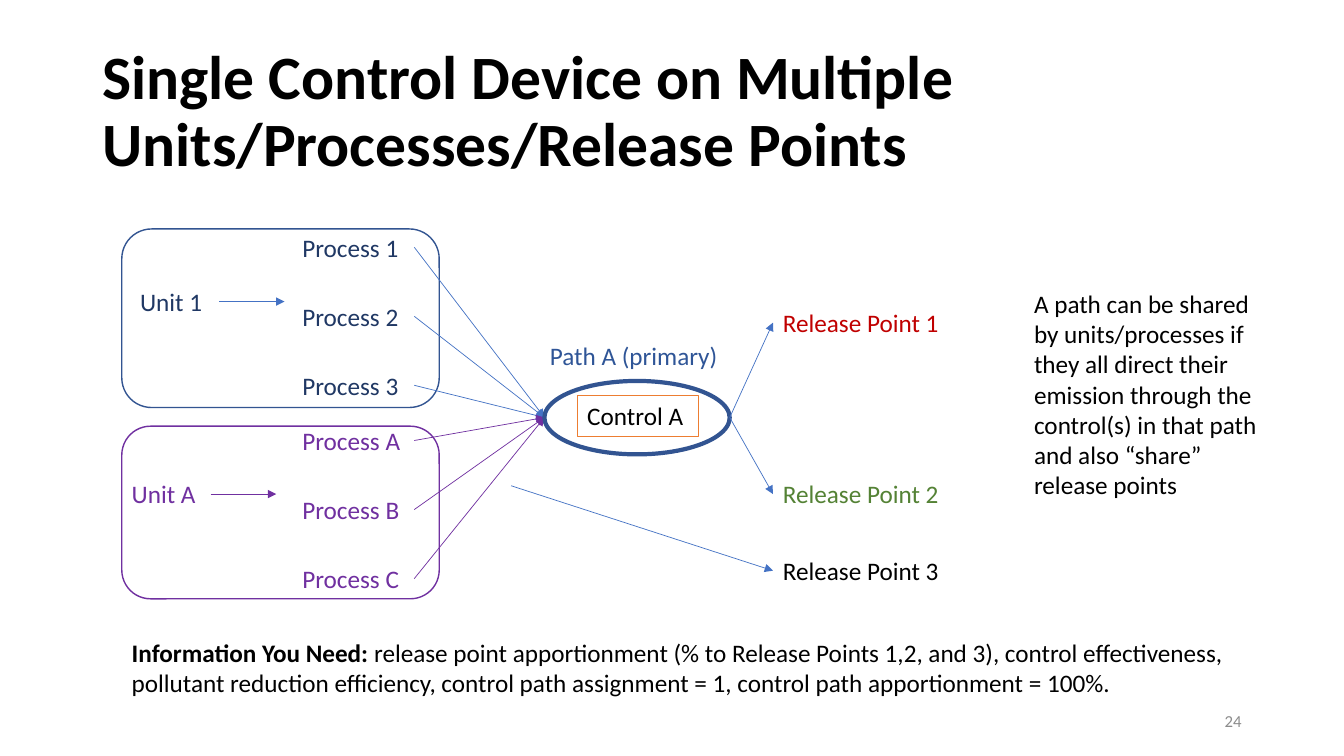
from dataclasses import dataclass

from lxml.etree import SubElement
from pptx import Presentation
from pptx.dml.color import RGBColor
from pptx.enum.shapes import MSO_CONNECTOR as Connector, MSO_SHAPE as Preset
from pptx.enum.text import MSO_ANCHOR as Anchor, MSO_AUTO_SIZE as AutoSize, PP_ALIGN as Align
from pptx.oxml.ns import qn
from pptx.shapes.autoshape import Shape
from pptx.slide import Slide
from pptx.text.text import TextFrame
from pptx.util import Cm, Pt

BLACK = RGBColor(0x00, 0x00, 0x00)
GRAY = RGBColor(0x8C, 0x8C, 0x8C)
NAVY = RGBColor(0x20, 0x38, 0x64)
OUTLINE_BLUE = RGBColor(0x32, 0x54, 0x91)
PATH_BLUE = RGBColor(0x2F, 0x55, 0x97)
ARROW_BLUE = RGBColor(0x44, 0x72, 0xC4)
PURPLE = RGBColor(0x70, 0x30, 0xA0)
ORANGE = RGBColor(0xED, 0x7D, 0x31)
RED = RGBColor(0xC0, 0x00, 0x00)
GREEN = RGBColor(0x54, 0x82, 0x35)

LABEL_HEIGHT = 1.03
LABEL_MIDDLE = 0.51
FRAME_LEFT = 3.07
FRAME_WIDTH = 8.0
PROCESS_LEFT = 7.37
PROCESS_WIDTH = 3.07
PROCESS_PITCH = 1.74
RELEASE_LEFT = 19.48
CONTROL_IN = (13.72, 10.52)
CONTROL_OUT = (18.39, 10.52)
BYPASS_START = (12.88, 12.24)

Point = tuple[float, float]


@dataclass(frozen=True)
class Box:
    left: float
    top: float
    width: float
    height: float = LABEL_HEIGHT

    def lengths(self) -> tuple[Cm, Cm, Cm, Cm]:
        return Cm(self.left), Cm(self.top), Cm(self.width), Cm(self.height)


@dataclass(frozen=True)
class Unit:
    name: str
    label_left: float
    label_top: float
    frame_top: float
    frame_height: float
    processes: tuple[str, ...]
    process_top: float
    text_color: RGBColor
    frame_color: RGBColor
    arrow_color: RGBColor


@dataclass(frozen=True)
class ReleasePoint:
    name: str
    top: float
    color: RGBColor
    source: Point


UNITS = (
    Unit("Unit 1", 3.28, 7.09, 5.77, 4.5, ("Process 1", "Process 2", "Process 3"),
         5.72, NAVY, OUTLINE_BLUE, ARROW_BLUE),
    Unit("Unit A", 3.07, 11.94, 10.74, 4.35, ("Process A", "Process B", "Process C"),
         10.59, PURPLE, PURPLE, PURPLE),
)
RELEASE_POINTS = (
    ReleasePoint("Release Point 1", 7.62, RED, CONTROL_OUT),
    ReleasePoint("Release Point 2", 11.94, GREEN, CONTROL_OUT),
    ReleasePoint("Release Point 3", 13.87, BLACK, BYPASS_START),
)


def apply_format(target: object, values: dict[str, object]) -> None:
    for name, value in values.items():
        setattr(target, name, value)


def write_text(frame: TextFrame, text: str, color: RGBColor, size: float = 18,
               lead: str = "", bold: bool = False, align: Align = Align.LEFT,
               anchor: Anchor = Anchor.TOP, line_spacing: float = 1.0) -> None:
    apply_format(frame, {"word_wrap": True, "auto_size": AutoSize.NONE,
                         "vertical_anchor": anchor})
    paragraph = frame.paragraphs[0]
    apply_format(paragraph, {"alignment": align, "line_spacing": line_spacing})
    for content, is_bold in ((lead, True), (text, bold)):
        if content:
            run = paragraph.add_run()
            run.text = content
            apply_format(run.font, {"name": "Calibri", "size": Pt(size), "bold": is_bold})
            run.font.color.rgb = color


def add_label(slide: Slide, box: Box, text: str, color: RGBColor, **options) -> None:
    write_text(slide.shapes.add_textbox(*box.lengths()).text_frame, text, color, **options)


def add_outline(slide: Slide, preset: Preset, box: Box, color: RGBColor,
                width: float) -> Shape:
    shape = slide.shapes.add_shape(preset, *box.lengths())
    shape.shadow.inherit = False
    shape.fill.background()
    shape.line.color.rgb = color
    shape.line.width = Pt(width)
    return shape


def add_arrow(slide: Slide, start: Point, end: Point, color: RGBColor) -> None:
    arrow = slide.shapes.add_connector(
        Connector.STRAIGHT, *(Cm(value) for value in (*start, *end)))
    arrow.line.color.rgb = color
    arrow.line.width = Pt(0.5)
    SubElement(arrow.line._get_or_add_ln(), qn("a:tailEnd"), type="triangle")
    SubElement(arrow._element.spPr, qn("a:effectLst"))


def add_unit(slide: Slide, unit: Unit) -> None:
    frame = Box(FRAME_LEFT, unit.frame_top, FRAME_WIDTH, unit.frame_height)
    add_outline(slide, Preset.ROUNDED_RECTANGLE, frame, unit.frame_color, 1)
    add_label(slide, Box(unit.label_left, unit.label_top, 2.26), unit.name, unit.text_color)
    arrow_left = unit.label_left + 2.24
    arrow_top = unit.label_top + LABEL_MIDDLE
    add_arrow(slide, (arrow_left, arrow_top), (arrow_left + 1.65, arrow_top),
              unit.arrow_color)
    for index, process in enumerate(unit.processes):
        top = unit.process_top + index * PROCESS_PITCH
        add_label(slide, Box(PROCESS_LEFT, top, PROCESS_WIDTH), process, unit.text_color)
        add_arrow(slide, (PROCESS_LEFT + PROCESS_WIDTH, top + LABEL_MIDDLE), CONTROL_IN,
                  unit.arrow_color)


def add_control(slide: Slide) -> None:
    control = add_outline(slide, Preset.RECTANGLE, Box(14.55, 9.96, 3.05), ORANGE, 0.75)
    write_text(control.text_frame, "Control A", BLACK)
    add_outline(slide, Preset.OVAL, Box(13.72, 9.6, 4.67, 1.85), OUTLINE_BLUE, 3)
    add_label(slide, Box(13.61, 8.46, 5.13), "Path A (primary)", PATH_BLUE)


def add_release_point(slide: Slide, point: ReleasePoint) -> None:
    add_arrow(slide, point.source, (RELEASE_LEFT, point.top + LABEL_MIDDLE), ARROW_BLUE)
    add_label(slide, Box(RELEASE_LEFT, point.top, 6.3), point.name, point.color)


def main() -> None:
    presentation = Presentation()
    apply_format(presentation, {"slide_width": Cm(33.87), "slide_height": Cm(19.05)})
    slide = presentation.slides.add_slide(presentation.slide_layouts[5])

    title = slide.shapes.title
    apply_format(title, dict(zip(("left", "top", "width", "height"),
                                 Box(2.33, 1.01, 29.21, 3.68).lengths())))
    write_text(title.text_frame,
               "Single Control Device on Multiple Units/Processes/Release Points",
               BLACK, size=44, bold=True, anchor=Anchor.MIDDLE, line_spacing=0.9)

    for unit in UNITS:
        add_unit(slide, unit)
    add_control(slide)
    for point in RELEASE_POINTS:
        add_release_point(slide, point)

    add_label(slide, Box(25.81, 7.14, 6.2, 5.64),
              "A path can be shared by units/processes if they all direct their emission "
              "through the control(s) in that path and also “share” release points", BLACK)
    add_label(slide, Box(3.07, 15.93, 28.47, 1.8),
              "release point apportionment (% to Release Points 1,2, and 3), control "
              "effectiveness, pollutant reduction efficiency, control path assignment = 1, "
              "control path apportionment = 100%.", BLACK, lead="Information You Need: ")
    add_label(slide, Box(23.92, 17.66, 7.62), "24", GRAY, size=12,
              align=Align.RIGHT, anchor=Anchor.MIDDLE)
    presentation.save("out.pptx")


if __name__ == "__main__":
    main()
